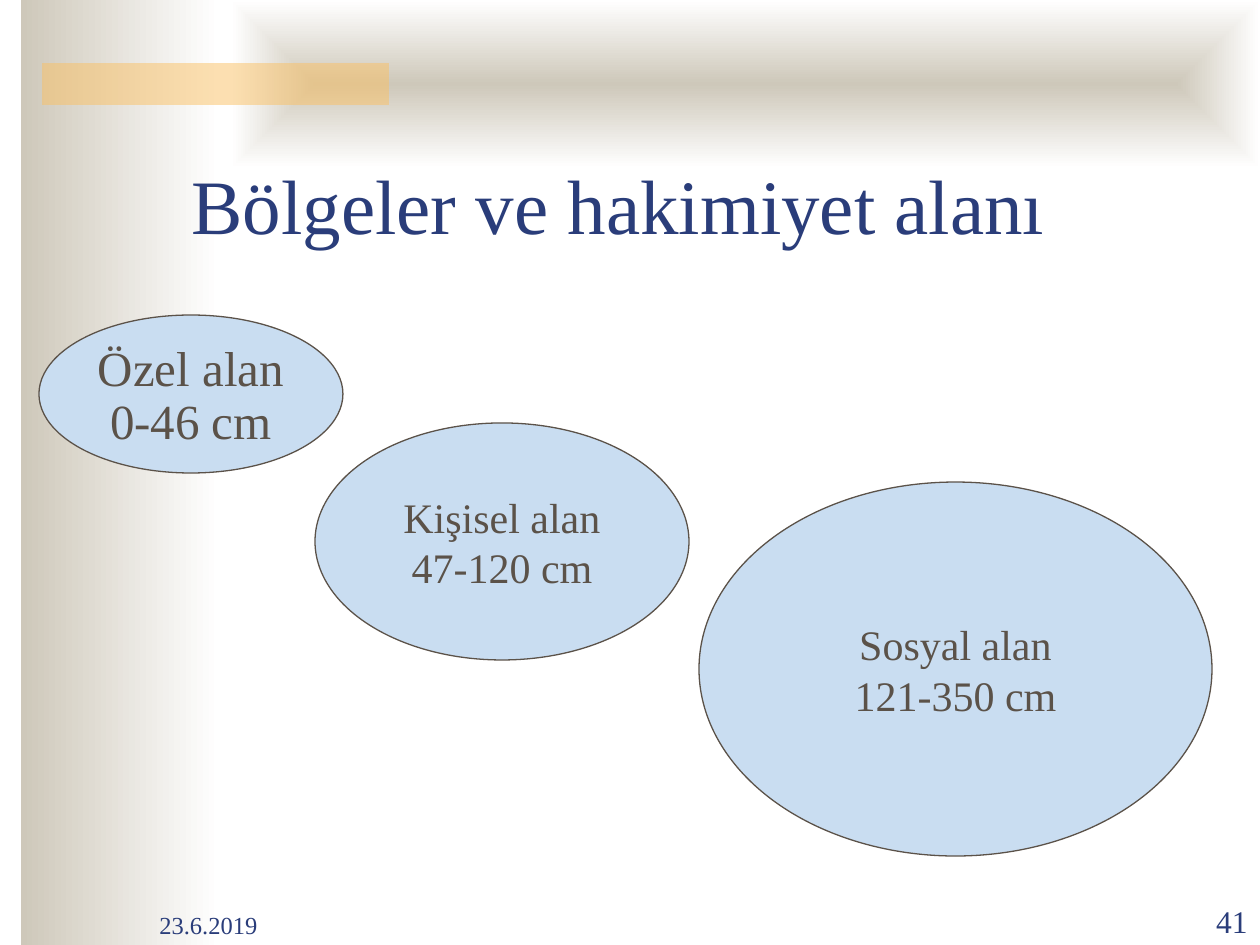
from lxml.etree import SubElement
from pptx import Presentation
from pptx.dml.color import RGBColor
from pptx.enum.shapes import MSO_SHAPE
from pptx.enum.text import MSO_ANCHOR, MSO_AUTO_SIZE, PP_ALIGN
from pptx.oxml.ns import qn
from pptx.util import Emu, Inches, Pt

PX_PER_INCH = 126
NAVY, BROWN, SKY = "2A3D7A", "5B5249", "C9DDF1"
SAND, WHITE, AMBER = "CEC8BA", "FFFFFF", "FAC164"


def px(length):
    return Emu(round(length * 914400 / PX_PER_INCH))


def to_emu(box):
    return [px(length) for length in box]


def color(hex_code):
    return RGBColor.from_string(hex_code)


def place(shape, box):
    shape.left, shape.top, shape.width, shape.height = to_emu(box)


def write(shape, lines, size, hex_code, align, anchor, wrap=True):
    frame = shape.text_frame
    frame.text = "\n".join(lines)
    frame.word_wrap = wrap
    frame.auto_size = MSO_AUTO_SIZE.NONE
    frame.vertical_anchor = anchor
    for para in frame.paragraphs:
        para.alignment = align
        para.font.name = "Times New Roman"
        para.font.size = Pt(size)
        para.font.color.rgb = color(hex_code)


def add_panel(page, box):
    """Add an unlined rectangle."""
    panel = page.shapes.add_shape(MSO_SHAPE.RECTANGLE, *to_emu(box))
    panel.shadow.inherit = False
    panel.line.fill.background()
    return panel


def fade(panel):
    """Fill with a left-to-right gradient from sand to white."""
    panel.fill.gradient()
    panel.fill.gradient_angle = 0
    for stop, position, hex_code in zip(panel.fill.gradient_stops, (0, 1), (SAND, WHITE)):
        stop.position = position
        stop.color.rgb = color(hex_code)


def fade_from_centre(panel):
    fade(panel)
    gradient = panel._element.spPr.find(qn("a:gradFill"))
    gradient.remove(gradient.find(qn("a:lin")))
    outline = SubElement(gradient, qn("a:path"))
    outline.set("path", "shape")
    centre = SubElement(outline, qn("a:fillToRect"))
    for side in "ltrb":
        centre.set(side, "50000")


def add_backdrop(page, box):
    left, top, width, height = box
    side = add_panel(page, (left + 21, top, 199, height))
    fade(side)
    band = add_panel(page, (left + 231, top, width - 231, 168))
    fade_from_centre(band)
    accent = add_panel(page, (left + 42, top + 63, 347, 42))
    accent.fill.solid()
    accent.fill.fore_color.rgb = color(AMBER)
    tint = accent._element.spPr.find(qn("a:solidFill"))[0]
    SubElement(tint, qn("a:alpha")).set("val", "50000")
    for index, panel in enumerate((side, band, accent), start=2):
        page.shapes._spTree.insert(index, panel._element)


def add_title(page, box, words):
    title = page.shapes.title
    place(title, box)
    write(title, [words], 44, NAVY, PP_ALIGN.CENTER, MSO_ANCHOR.MIDDLE)


def paint_zone(zone):
    zone.fill.solid()
    zone.fill.fore_color.rgb = color(SKY)
    zone.line.color.rgb = color(BROWN)
    zone.line.width = Pt(0.75)


def fill_private_zone(page, box, lines):
    """Turn the body placeholder into the first ellipse."""
    zone = page.placeholders[1]
    place(zone, box)
    geometry = SubElement(zone._element.spPr, qn("a:prstGeom"))
    geometry.set("prst", "ellipse")
    SubElement(geometry, qn("a:avLst"))
    paint_zone(zone)
    zone.text_frame.text = "\n".join(lines)
    write(zone, lines, 28, BROWN, PP_ALIGN.CENTER, MSO_ANCHOR.TOP)
    for para in zone.text_frame.paragraphs:
        para.line_spacing = 0.9
        para.space_before = Pt(0)
        properties = para._p.get_or_add_pPr()
        properties.set("marL", str(Inches(0.5)))
        properties.set("indent", str(-Inches(0.5)))
        bullet = SubElement(properties, qn("a:buNone"))
        properties.find(qn("a:defRPr")).addprevious(bullet)


def add_zone(page, box, lines):
    zone = page.shapes.add_shape(MSO_SHAPE.OVAL, *to_emu(box))
    zone.shadow.inherit = False
    paint_zone(zone)
    write(zone, lines, 24, BROWN, PP_ALIGN.CENTER, MSO_ANCHOR.MIDDLE, wrap=False)


def add_footer(page, box, date, number):
    left, top, width, height = box
    date_box = page.shapes.add_textbox(*to_emu((left, top, 262, height)))
    write(date_box, [date], 14, NAVY, PP_ALIGN.LEFT, MSO_ANCHOR.BOTTOM)
    number_box = page.shapes.add_textbox(*to_emu((left + width - 126, top, 126, height)))
    write(number_box, [number], 18, NAVY, PP_ALIGN.RIGHT, MSO_ANCHOR.BOTTOM)


def main():
    deck = Presentation()
    deck.slide_width, deck.slide_height = px(1260), px(945)
    page = deck.slides.add_slide(deck.slide_layouts[1])
    add_backdrop(page, (0, 0, 1260, 945))
    add_title(page, (25, 125, 1187, 158), "Bölgeler ve hakimiyet alanı")
    fill_private_zone(page, (39, 315, 304, 158), ["Özel alan", "0-46 cm"])
    add_zone(page, (315, 423, 374, 237), ["Kişisel alan", "47-120 cm"])
    add_zone(page, (699, 482, 513, 374), ["Sosyal alan", "121-350 cm"])
    add_footer(page, (147, 883, 1113, 63), "23.6.2019", "41")
    deck.save("out.pptx")


if __name__ == "__main__":
    main()
